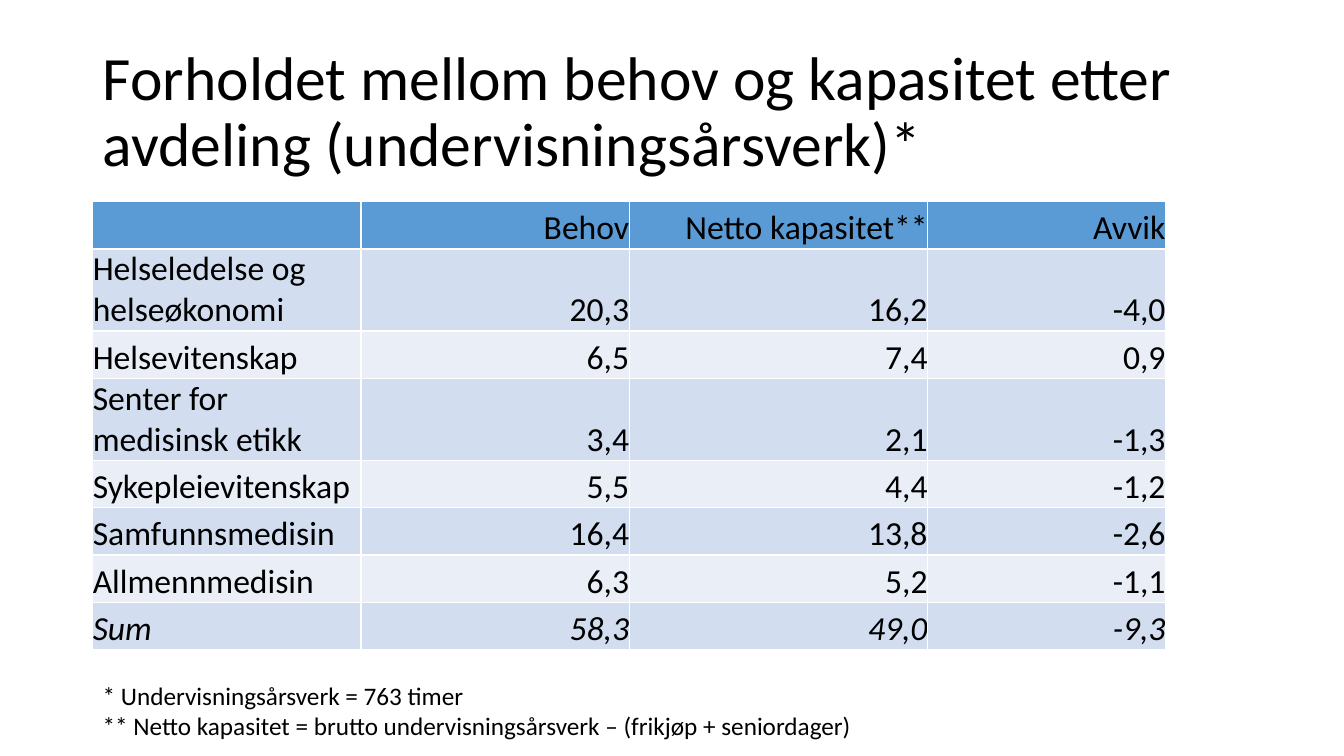
from pptx import Presentation
from pptx.dml.color import RGBColor
from pptx.enum.text import MSO_ANCHOR, MSO_AUTO_SIZE, PP_ALIGN
from pptx.util import Inches, Pt

LEFT, RIGHT = PP_ALIGN.LEFT, PP_ALIGN.RIGHT
MIDDLE, BOTTOM = MSO_ANCHOR.MIDDLE, MSO_ANCHOR.BOTTOM

# Content
TITLE = "Forholdet mellom behov og kapasitet etter avdeling (undervisningsårsverk)*"
ROWS = [
    ("", "Behov", "Netto kapasitet**", "Avvik"),
    ("Helseledelse og helseøkonomi", "20,3", "16,2", "-4,0"),
    ("Helsevitenskap", "6,5", "7,4", "0,9"),
    ("Senter for medisinsk etikk", "3,4", "2,1", "-1,3"),
    ("Sykepleievitenskap", "5,5", "4,4", "-1,2"),
    ("Samfunnsmedisin", "16,4", "13,8", "-2,6"),
    ("Allmennmedisin", "6,3", "5,2", "-1,1"),
    ("Sum", "58,3", "49,0", "-9,3"),
]
FOOTNOTES = [
    "* Undervisningsårsverk = 763 timer",
    "** Netto kapasitet = brutto undervisningsårsverk – (frikjøp + seniordager)",
]

# Look and layout, in inches
COLORS = {"text": "000000", "header": "5B9BD5", "odd": "D2DEEF", "even": "EAEFF7"}
FONT = "Calibri"
MARGIN = 0.92
COLUMN_WIDTHS = [2.66, 2.66, 2.96, 2.36]
ROW_HEIGHT, TALL_ROW_HEIGHT = 0.47, 0.74
TALL_ROWS = (1, 3)


def write(frame, lines, size, align=LEFT, anchor=None, italic=False, spacing=None):
    frame.word_wrap = True
    if anchor is not None:
        frame.vertical_anchor = anchor
    for index, line in enumerate(lines):
        para = frame.paragraphs[0] if index == 0 else frame.add_paragraph()
        para.alignment = align
        para.line_spacing = spacing
        para.font.size = Pt(size)
        if not line:
            continue
        span = para.add_run()
        span.text = line
        span.font.name, span.font.size = FONT, Pt(size)
        span.font.bold, span.font.italic = False, italic
        span.font.color.rgb = RGBColor.from_string(COLORS["text"])


def row_color(row):
    if row == 0:
        return COLORS["header"]
    return COLORS["odd" if row % 2 else "even"]


deck = Presentation()
deck.slide_width, deck.slide_height = Inches(13.33), Inches(7.5)
page = deck.slides.add_slide(deck.slide_layouts[5])

# Title
title = page.shapes.title
title.left, title.top = Inches(MARGIN), Inches(0.4)
title.width, title.height = Inches(11.5), Inches(1.45)
write(title.text_frame, [TITLE], 44, anchor=MIDDLE, spacing=0.9)
title.text_frame.auto_size = MSO_AUTO_SIZE.NONE

# Table: the default style supplies the white rules
heights = [TALL_ROW_HEIGHT if row in TALL_ROWS else ROW_HEIGHT for row in range(len(ROWS))]
table = page.shapes.add_table(
    len(ROWS), len(COLUMN_WIDTHS), Inches(MARGIN), Inches(2),
    Inches(sum(COLUMN_WIDTHS)), Inches(sum(heights))).table
for column, width in zip(table.columns, COLUMN_WIDTHS):
    column.width = Inches(width)
for row, (values, height) in enumerate(zip(ROWS, heights)):
    table.rows[row].height = Inches(height)
    for column, value in enumerate(values):
        cell = table.cell(row, column)
        cell.fill.solid()
        cell.fill.fore_color.rgb = RGBColor.from_string(row_color(row))
        cell.margin_left = cell.margin_right = cell.margin_top = cell.margin_bottom = 0
        cell.vertical_anchor = BOTTOM
        write(cell.text_frame, [value], 24, align=RIGHT if column else LEFT,
              italic=row == len(ROWS) - 1)

# Footnotes
notes = page.shapes.add_textbox(Inches(MARGIN), Inches(6.7), Inches(10.18), Inches(0.71))
write(notes.text_frame, FOOTNOTES, 18)
notes.text_frame.auto_size = MSO_AUTO_SIZE.SHAPE_TO_FIT_TEXT

deck.save("out.pptx")
